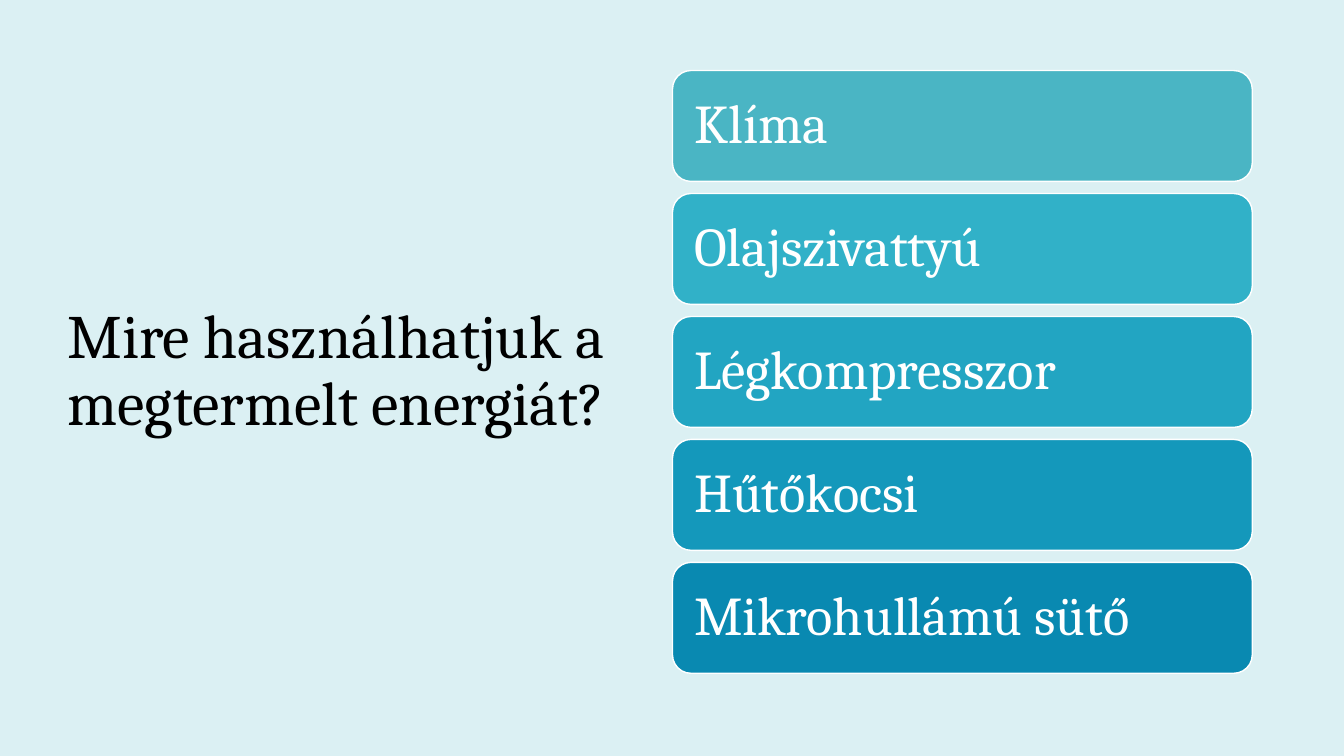
from pptx import Presentation
from pptx.dml.color import RGBColor
from pptx.enum.shapes import MSO_SHAPE
from pptx.enum.text import MSO_ANCHOR, PP_ALIGN
from pptx.util import Inches, Pt

# Content
TITLE = "Mire használhatjuk a megtermelt energiát?"
USES = [
    ("Klíma", "4AB5C4"),
    ("Olajszivattyú", "31B1C8"),
    ("Légkompresszor", "22A5C2"),
    ("Hűtőkocsi", "1498BB"),
    ("Mikrohullámú sütő", "0989B1"),
]
COLORS = {"back": "DBF0F3", "title": "000000", "white": "FFFFFF"}
FONT = "Cambria"

# Bar layout in inches
LEFT, TOP, WIDTH, HEIGHT, STEP = 6.67, 0.7, 5.75, 1.1, 1.22
INSET = 0.16


def paint(fill, color):
    fill.solid()
    fill.fore_color.rgb = RGBColor.from_string(color)


def write(frame, text, size, color):
    frame.text = text
    frame.word_wrap = True
    frame.vertical_anchor = MSO_ANCHOR.MIDDLE
    para = frame.paragraphs[0]
    para.alignment = PP_ALIGN.LEFT
    para.line_spacing = 0.9
    para.font.name = FONT
    para.font.size = Pt(size)
    para.font.color.rgb = RGBColor.from_string(color)


# Slide and background
deck = Presentation()
deck.slide_width, deck.slide_height = Inches(13.33), Inches(7.5)
slide = deck.slides.add_slide(deck.slide_layouts[5])
paint(slide.background.fill, COLORS["back"])

# Title
title = slide.shapes.title
title.left, title.top = Inches(0.57), Inches(0.68)
title.width, title.height = Inches(5.67), Inches(6.02)
write(title.text_frame, TITLE, 44, COLORS["title"])

# Bars, one for each use
for row, (use, color) in enumerate(USES):
    bar = slide.shapes.add_shape(
        MSO_SHAPE.ROUNDED_RECTANGLE,
        Inches(LEFT), Inches(TOP + row * STEP), Inches(WIDTH), Inches(HEIGHT),
    )
    bar.shadow.inherit = False
    paint(bar.fill, color)
    paint(bar.line.fill, COLORS["white"])
    bar.line.width = Pt(1)
    frame = bar.text_frame
    frame.margin_left = frame.margin_right = Inches(INSET)
    frame.margin_top = frame.margin_bottom = Inches(INSET)
    write(frame, use, 39, COLORS["white"])

deck.save("out.pptx")
